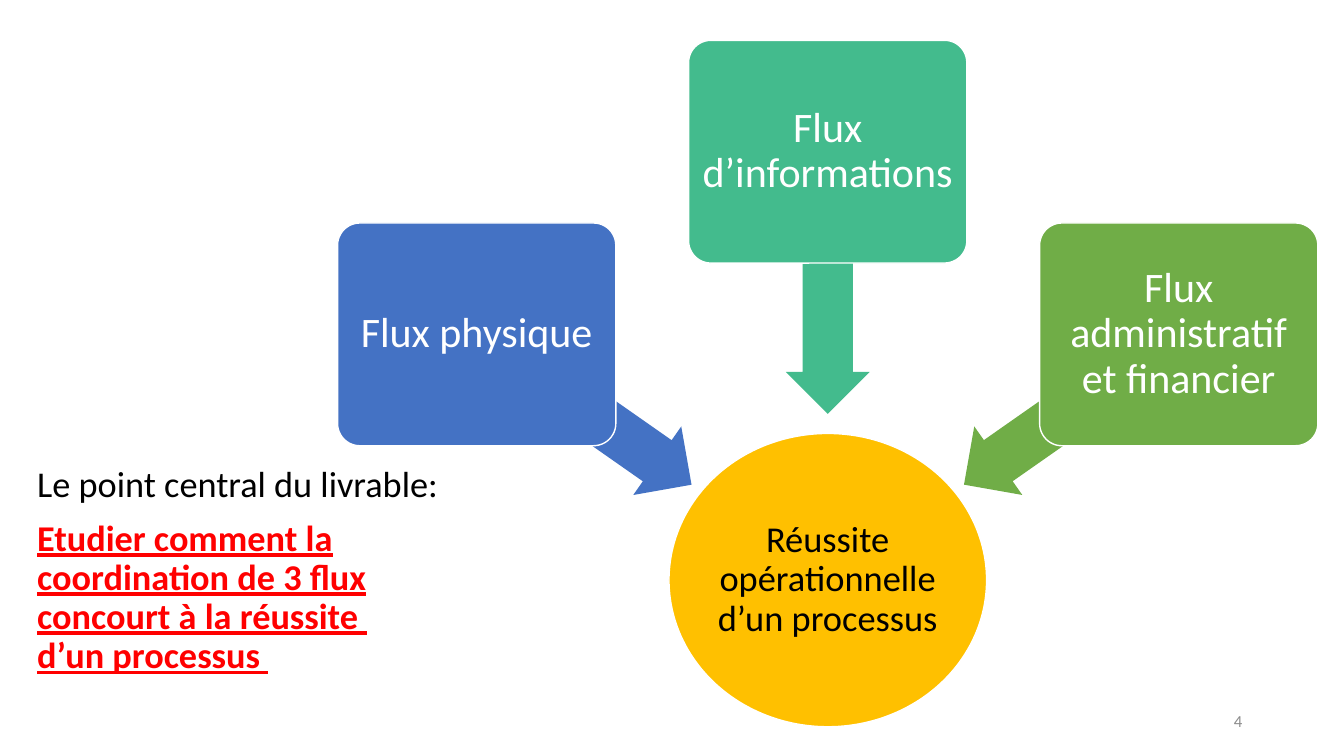
from math import cos, radians, sin

from pptx import Presentation
from pptx.dml.color import RGBColor
from pptx.enum.shapes import MSO_SHAPE
from pptx.enum.text import MSO_ANCHOR, PP_ALIGN
from pptx.util import Inches, Pt

OVAL = MSO_SHAPE.OVAL
ROUND = MSO_SHAPE.ROUNDED_RECTANGLE
ARROW = MSO_SHAPE.LEFT_ARROW
MIDDLE = MSO_ANCHOR.MIDDLE
CENTER = PP_ALIGN.CENTER
RIGHT = PP_ALIGN.RIGHT

COLORS = {
    "blue": "4472C4", "teal": "43BB8D", "green": "70AD47", "gold": "FFC000",
    "white": "FFFFFF", "black": "000000", "red": "FF0000", "gray": "8C8C8C",
}
FLOWS = [
    ("Flux physique", "blue", 215, 2.57),
    ("Flux d’informations", "teal", 270, 2.64),
    ("Flux administratif et financier", "green", 325, 2.57),
]


def rgb(name):
    return RGBColor.from_string(COLORS[name])


def style(font, size, color):
    font.name = "Calibri"
    font.size = Pt(size)
    font.color.rgb = rgb(color)


def add_block(slide, kind, mid, size, color):
    x, y = mid
    w, h = size
    block = slide.shapes.add_shape(
        kind, Inches(x - w / 2), Inches(y - h / 2), Inches(w), Inches(h))
    block.shadow.inherit = False
    block.fill.solid()
    block.fill.fore_color.rgb = rgb(color)
    block.line.fill.background()
    return block


def add_label(block, text, size, color, inset):
    block.line.color.rgb = rgb("white")
    block.line.width = Pt(1)
    frame = block.text_frame
    frame.word_wrap = True
    frame.vertical_anchor = MIDDLE
    frame.margin_left = frame.margin_right = Inches(inset)
    frame.margin_top = frame.margin_bottom = Inches(inset)
    frame.text = text
    para = frame.paragraphs[0]
    para.alignment = CENTER
    para.line_spacing = 0.9
    style(para.runs[0].font, size, color)


def add_radial(slide, x, y, w, h):
    hub_w, hub_h = 3.15, 2.91
    hub = (x + w / 2, y + h - hub_h / 2)
    circle = add_block(slide, OVAL, hub, (hub_w, hub_h), "gold")
    add_label(circle, "Réussite opérationnelle d’un processus", 26, "black", 0.02)
    for text, color, angle, length in FLOWS:
        dx, dy = cos(radians(angle)), sin(radians(angle))
        reach = 1.65 + length / 2
        arrow = add_block(slide, ARROW, (hub[0] + reach * dx, hub[1] + reach * dy),
                          (length, 0.83), color)
        arrow.adjustments[0] = 0.6
        arrow.adjustments[1] = 0.5
        arrow.rotation = angle
        box = add_block(slide, ROUND, (hub[0] + 4.25 * dx, hub[1] + 4.25 * dy),
                        (2.76, 2.21), color)
        box.adjustments[0] = 0.1
        add_label(box, text, 30, "white", 0.06)


def add_text(slide, x, y, w, h):
    frame = slide.shapes.add_textbox(
        Inches(x), Inches(y), Inches(w), Inches(h)).text_frame
    frame.word_wrap = True
    return frame


def add_goal(slide, x, y, w, h):
    frame = add_text(slide, x, y, w, h)
    lead = frame.paragraphs[0]
    lead.text = "Le point central du livrable:"
    goal = frame.add_paragraph()
    goal.text = ("Etudier comment la coordination de 3 flux "
                 "concourt à la réussite \vd’un processus ")
    for para, color in ((lead, "black"), (goal, "red")):
        para.line_spacing = 0.9
        para.space_before = Pt(10)
        for run in para.runs:
            style(run.font, 25.9, color)
    for run in goal.runs:
        run.font.bold = True
        run.font.underline = True


def add_number(slide, x, y, w, h):
    frame = add_text(slide, x, y, w, h)
    frame.vertical_anchor = MIDDLE
    para = frame.paragraphs[0]
    para.text = "4"
    para.alignment = RIGHT
    style(para.runs[0].font, 12, "gray")


def main():
    deck = Presentation()
    deck.slide_width = Inches(13.33)
    deck.slide_height = Inches(7.5)
    slide = deck.slides.add_slide(deck.slide_layouts[6])
    add_radial(slide, 3.35, 0.4, 9.72, 6.81)
    add_goal(slide, 0.27, 4.58, 4.42, 2.23)
    add_number(slide, 9.42, 6.95, 3, 0.4)
    deck.save("out.pptx")


if __name__ == "__main__":
    main()
